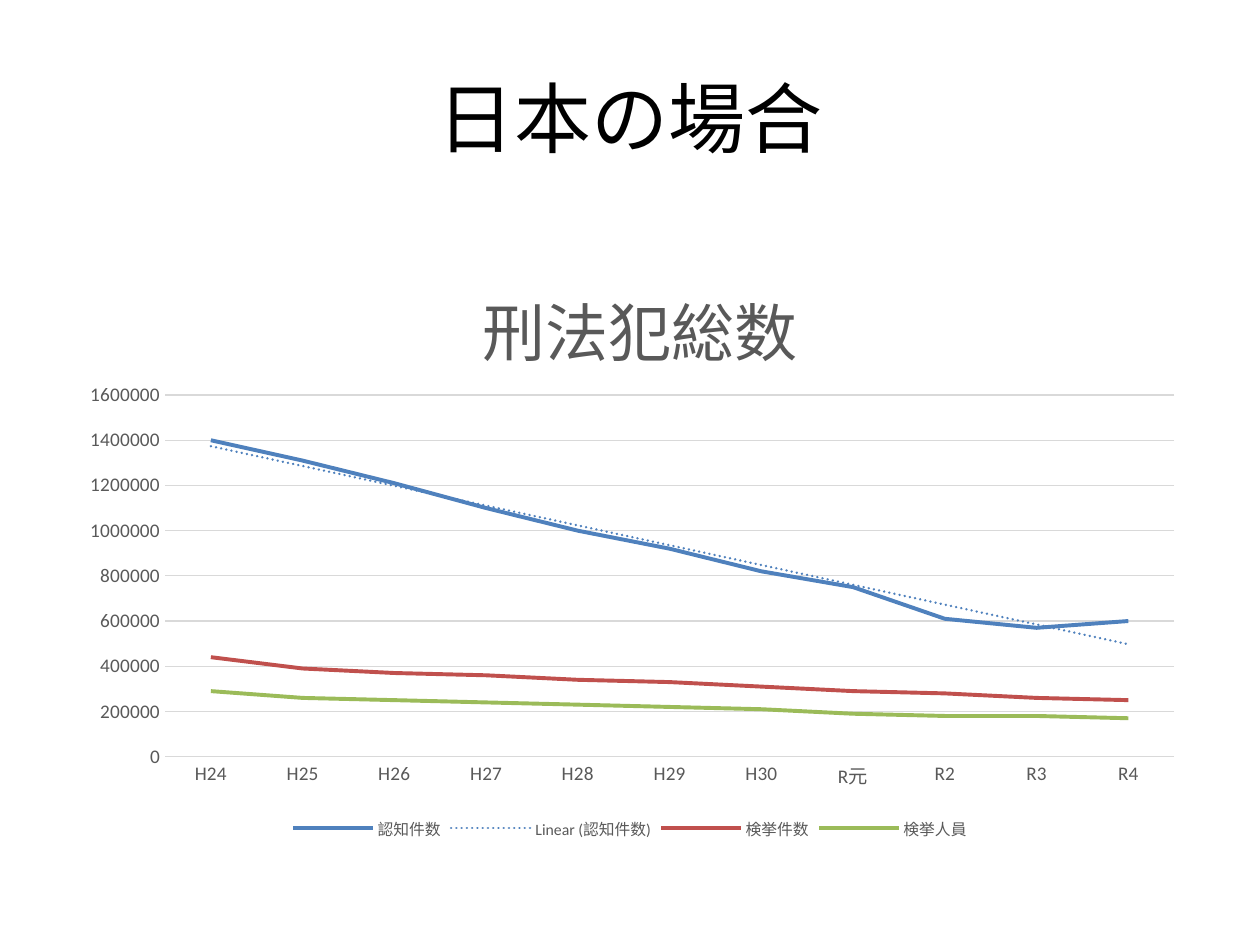
from lxml import etree
from pptx import Presentation
from pptx import util as u
from pptx.chart.data import CategoryChartData
from pptx.dml.color import RGBColor
from pptx.enum import chart as charts, dml, text
from pptx.oxml import parse_xml
from pptx.oxml.ns import nsdecls, qn

WIDTH, HEIGHT = u.Inches(10), u.Inches(7.5)
FONT, GREY, GRID = "Calibri", "595959", "D9D9D9"
YEARS = ["H24", "H25", "H26", "H27", "H28", "H29", "H30", "R元", "R2", "R3", "R4"]
SERIES = [
    ("認知件数", "4F81BD", [140, 131, 121, 110, 100, 92, 82, 75, 61, 57, 60]),
    ("検挙件数", "C0504D", [44, 39, 37, 36, 34, 33, 31, 29, 28, 26, 25]),
    ("検挙人員", "9BBB59", [29, 26, 25, 24, 23, 22, 21, 19, 18, 18, 17]),
]
UNIT = 10000


def color(value):
    """Turn a hex string into a colour."""
    return RGBColor.from_string(value)


def style_font(font, size, value):
    """Set the typeface, size and colour of a font."""
    font.name, font.size, font.bold = FONT, u.Pt(size), False
    font.color.rgb = color(value)


def style_line(line, value, width):
    """Set the colour and width of a line."""
    line.color.rgb = color(value)
    line.width = u.Pt(width)


def set_layout(parent, index, **shares):
    """Place a chart part by shares of the chart's size."""
    for old in parent.findall(qn("c:layout")):
        parent.remove(old)
    layout = parse_xml(f"<c:layout {nsdecls('c')}><c:manualLayout/></c:layout>")
    settings = {"layoutTarget": "inner"} if "w" in shares else {}
    settings.update(xMode="edge", yMode="edge", **shares)
    for name, value in settings.items():
        etree.SubElement(layout[0], qn(f"c:{name}")).set("val", str(value))
    parent.insert(index, layout)


def add_trend(series, value):
    """Add a dotted linear trend line to a series."""
    trend = parse_xml(
        f"<c:trendline {nsdecls('c', 'a')}><c:spPr><a:ln w=\"{u.Pt(1.5)}\" cap=\"rnd\">"
        f"<a:solidFill><a:srgbClr val=\"{value}\"/></a:solidFill>"
        "<a:prstDash val=\"sysDot\"/></a:ln></c:spPr>"
        "<c:trendlineType val=\"linear\"/><c:dispRSqr val=\"0\"/>"
        "<c:dispEq val=\"0\"/></c:trendline>")
    series._element.find(qn("c:cat")).addprevious(trend)


def add_heading(slide, box):
    """Write the centred slide heading in its box."""
    text_frame = slide.shapes.add_textbox(*box).text_frame
    text_frame.word_wrap = True
    text_frame.vertical_anchor = text.MSO_ANCHOR.MIDDLE
    text_frame.text = "日本の場合"
    paragraph = text_frame.paragraphs[0]
    paragraph.alignment = text.PP_ALIGN.CENTER
    style_font(paragraph.runs[0].font, 44, "000000")


def style_axes(chart):
    """Style both axes and the gridlines."""
    for axis in (chart.category_axis, chart.value_axis):
        axis.major_tick_mark = axis.minor_tick_mark = charts.XL_TICK_MARK.NONE
        style_font(axis.tick_labels.font, 11, GREY)
    style_line(chart.category_axis.format.line, GRID, 0.75)
    values = chart.value_axis
    values.format.line.fill.background()
    values.minimum_scale, values.maximum_scale = 0, 160 * UNIT
    values.major_unit = 20 * UNIT
    style_line(values.major_gridlines.format.line, GRID, 0.75)


def add_crime_chart(slide, box):
    """Draw the line chart of criminal offences in its box."""
    data = CategoryChartData(number_format="General")
    data.categories = YEARS
    for name, _, values in SERIES:
        data.add_series(name, [value * UNIT for value in values])
    chart = slide.shapes.add_chart(charts.XL_CHART_TYPE.LINE, *box, data).chart
    style_font(chart.font, 10, "000000")
    chart.has_title = True
    title = chart.chart_title
    title.text_frame.text = "刑法犯総数"
    style_font(title.text_frame.paragraphs[0].runs[0].font, 36, GREY)
    title.include_in_layout = False
    set_layout(title._element, 1, x=0.36, y=0.07)
    chart.has_legend = True
    chart.legend.position = charts.XL_LEGEND_POSITION.BOTTOM
    chart.legend.include_in_layout = False
    style_font(chart.legend.font, 9, GREY)
    style_axes(chart)
    plot = chart.plots[0]
    plot.vary_by_categories = False
    for series, (_, value, _) in zip(plot.series, SERIES):
        series.smooth = False
        series.marker.style = charts.XL_MARKER_STYLE.NONE
        style_line(series.format.line, value, 2.25)
        series.format.line.dash_style = dml.MSO_LINE.SOLID
    add_trend(plot.series[0], SERIES[0][1])
    plot_area = chart._chartSpace.find(".//" + qn("c:plotArea"))
    set_layout(plot_area, 0, x=0.09, y=0.28, w=0.89, h=0.58)


def main():
    """Build and save the slide."""
    presentation = Presentation()
    presentation.slide_width, presentation.slide_height = WIDTH, HEIGHT
    slide = presentation.slides.add_slide(presentation.slide_layouts[6])
    left, width = int(WIDTH * 0.05), int(WIDTH * 0.9)
    add_heading(slide, (left, int(HEIGHT * 0.04), width, int(HEIGHT / 6)))
    add_crime_chart(slide, (left, int(HEIGHT * 7 / 30), width, int(HEIGHT * 0.66)))
    presentation.save("out.pptx")


if __name__ == "__main__":
    main()
